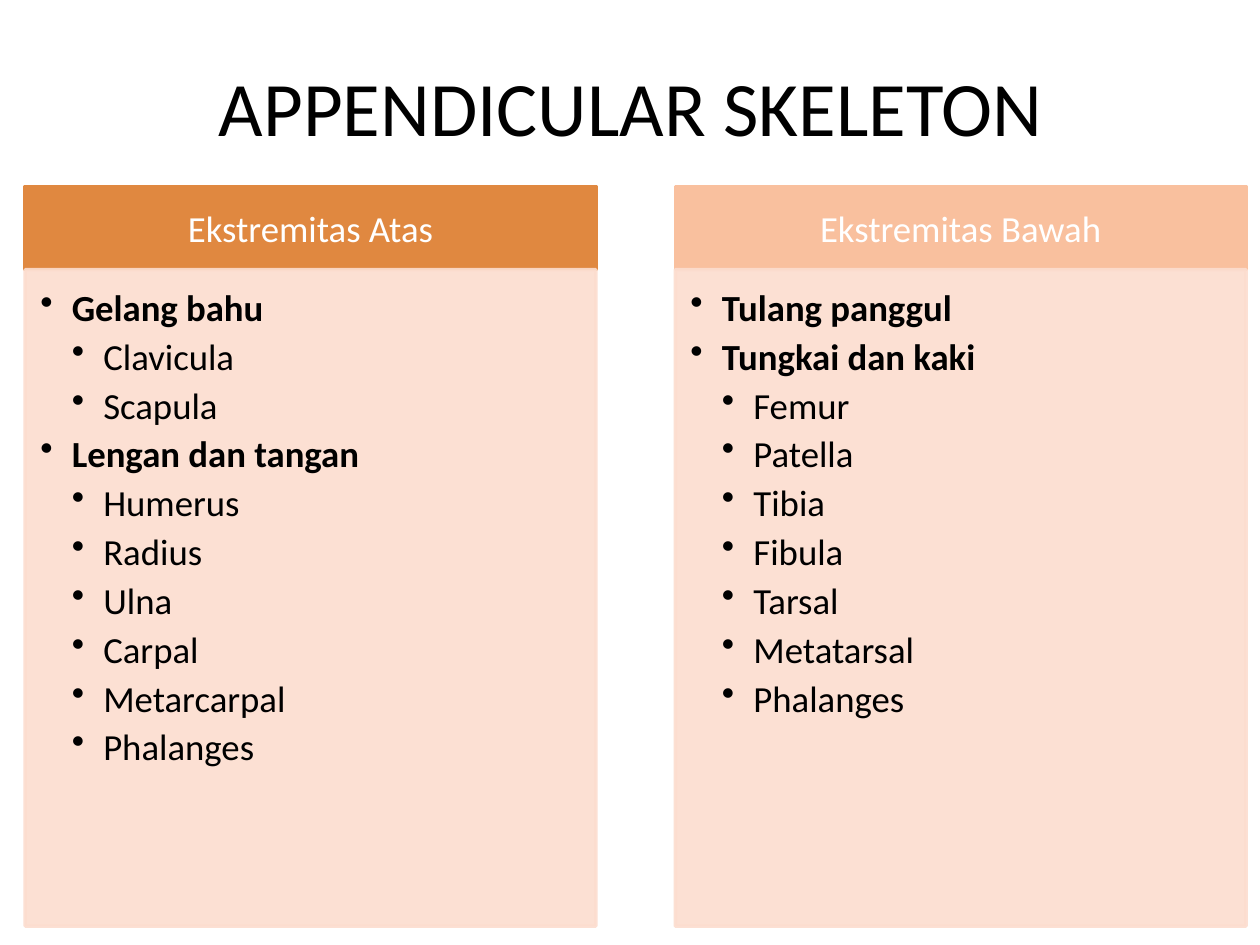
from dataclasses import dataclass

from lxml import etree
from pptx import Presentation
from pptx.dml.color import RGBColor
from pptx.enum.shapes import MSO_SHAPE
from pptx.enum.text import MSO_ANCHOR, PP_ALIGN
from pptx.oxml.ns import qn
from pptx.util import Inches, Pt

RECT = MSO_SHAPE.RECTANGLE
TOP, MIDDLE = MSO_ANCHOR.TOP, MSO_ANCHOR.MIDDLE
LEFT, CENTER = PP_ALIGN.LEFT, PP_ALIGN.CENTER


@dataclass(frozen=True)
class Theme:
    font: str = "Calibri"
    title_size: int = 44
    text_size: int = 21
    text: str = "000000"
    header_text: str = "FFFFFF"
    body: str = "FCDDCF"
    body_alpha: str = "90000"


theme = Theme()

# Each column: header, header colour, groups of (heading, bones)
columns = [
    ("Ekstremitas Atas", "E08840", [
        ("Gelang bahu", ["Clavicula", "Scapula"]),
        ("Lengan dan tangan", ["Humerus", "Radius", "Ulna", "Carpal",
                               "Metarcarpal", "Phalanges"]),
    ]),
    ("Ekstremitas Bawah", "F9C09E", [
        ("Tulang panggul", []),
        ("Tungkai dan kaki", ["Femur", "Patella", "Tibia", "Fibula",
                              "Tarsal", "Metatarsal", "Phalanges"]),
    ]),
]
column_left, column_step, column_width = 0.2, 5.16, 4.53
header_top, header_height, body_height = 1.48, 0.66, 5.21
indent = 0.25


def add_panel(left, top, height, color, anchor, insets):
    sp = slide.shapes.add_shape(RECT, Inches(left), Inches(top),
                                Inches(column_width), Inches(height))
    sp.shadow.inherit = False
    sp.fill.solid()
    sp.fill.fore_color.rgb = RGBColor.from_string(color)
    sp.line.color.rgb = RGBColor.from_string(color)
    sp.line.width = Pt(2)
    tf = sp.text_frame
    tf.word_wrap = True
    tf.vertical_anchor = anchor
    tf.margin_left, tf.margin_top, tf.margin_right, tf.margin_bottom = map(Inches, insets)
    return sp


def add_run(p, text, size, color, align, bold=False):
    p.alignment = align
    r = p.add_run()
    r.text = text
    r.font.name = theme.font
    r.font.size = Pt(size)
    r.font.bold = bold
    r.font.color.rgb = RGBColor.from_string(color)


prs = Presentation()
prs.slide_width, prs.slide_height = Inches(10), Inches(7.5)
slide = prs.slides.add_slide(prs.slide_layouts[6])

title = slide.shapes.add_textbox(Inches(0.51), Inches(0.21), Inches(9), Inches(1.25))
tf = title.text_frame
tf.word_wrap = True
tf.vertical_anchor = MIDDLE
add_run(tf.paragraphs[0], "APPENDICULAR SKELETON", theme.title_size, theme.text, CENTER)

for i, (heading, color, groups) in enumerate(columns):
    left = column_left + i * column_step
    header = add_panel(left, header_top, header_height, color, MIDDLE,
                       (0.16, 0.09, 0.16, 0.09))
    add_run(header.text_frame.paragraphs[0], heading, theme.text_size,
            theme.header_text, CENTER)

    body = add_panel(left, header_top + header_height, body_height, theme.body, TOP,
                     (0.12, 0.12, 0.16, 0.18))
    for clr in body._element.spPr.iter(qn("a:srgbClr")):
        etree.SubElement(clr, qn("a:alpha"), val=theme.body_alpha)

    items = []
    for group, bones in groups:
        items += [(group, 0)] + [(bone, 1) for bone in bones]
    tf = body.text_frame
    for n, (text, level) in enumerate(items):
        p = tf.add_paragraph() if n else tf.paragraphs[0]
        p.level = level
        p.space_after = Pt(2.7)
        add_run(p, text, theme.text_size, theme.text, LEFT, bold=level == 0)
        pPr = p._p.get_or_add_pPr()
        pPr.set("marL", str(Inches(indent * (level + 1))))
        pPr.set("indent", str(-Inches(indent)))
        etree.SubElement(pPr, qn("a:buChar"), char="•")

prs.save("out.pptx")
